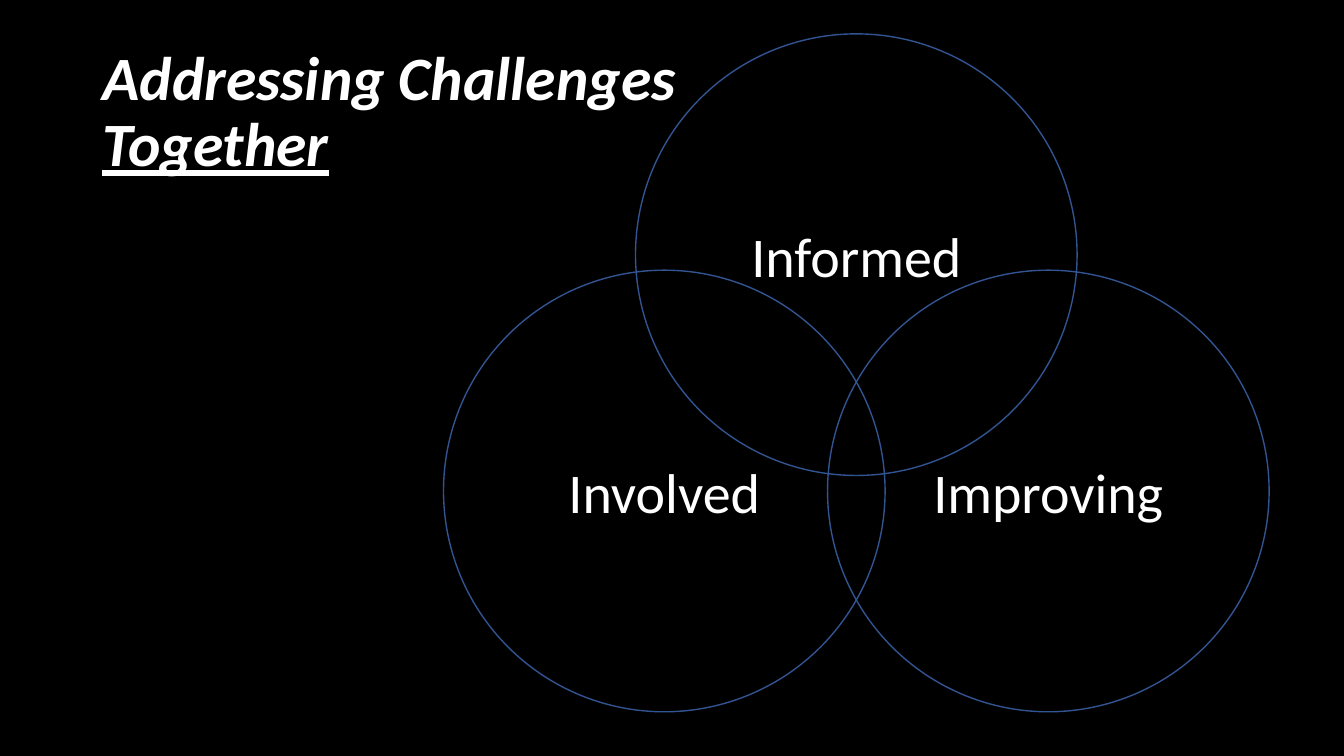
from pptx import Presentation
from pptx.dml.color import RGBColor
from pptx.enum.shapes import MSO_SHAPE
from pptx.enum.text import MSO_ANCHOR, PP_ALIGN
from pptx.util import Pt

FONT = "Calibri"
BLACK = "000000"
WHITE = "FFFFFF"
BLUE = "325491"


def color(hex_string):
    return RGBColor.from_string(hex_string)


def add_run(paragraph, text, size, bold=False, italic=False, underline=False):
    run = paragraph.add_run()
    run.text = text
    font = run.font
    font.name = FONT
    font.size = Pt(size)
    font.bold = bold
    font.italic = italic
    font.underline = underline
    font.color.rgb = color(WHITE)


def add_title(slide, left, top, width, height):
    title = slide.shapes.add_textbox(Pt(left), Pt(top), Pt(width), Pt(height))
    frame = title.text_frame
    frame.word_wrap = True
    frame.vertical_anchor = MSO_ANCHOR.MIDDLE
    paragraph = frame.paragraphs[0]
    paragraph.line_spacing = 0.9
    add_run(paragraph, "Addressing Challenges ", 44, bold=True, italic=True)
    add_run(paragraph, "Together", 44, bold=True, italic=True, underline=True)


def add_circle(slide, label, left, top, diameter):
    circle = slide.shapes.add_shape(
        MSO_SHAPE.OVAL, Pt(left), Pt(top), Pt(diameter), Pt(diameter))
    circle.shadow.inherit = False
    circle.fill.background()
    circle.line.color.rgb = color(BLUE)
    circle.line.width = Pt(1)
    frame = circle.text_frame
    frame.word_wrap = True
    frame.vertical_anchor = MSO_ANCHOR.MIDDLE
    paragraph = frame.paragraphs[0]
    paragraph.alignment = PP_ALIGN.CENTER
    add_run(paragraph, label, 40)


def add_venn(slide, left, top, width, height, diameter):
    """Place one circle at the top centre and two in the lower corners."""
    across = width - diameter
    down = height - diameter
    for label, x_share, y_share in (
            ("Informed", 0.5, 0), ("Involved", 0, 1), ("Improving", 1, 1)):
        add_circle(slide, label, left + across * x_share,
                   top + down * y_share, diameter)


def main():
    deck = Presentation()
    deck.slide_width, deck.slide_height = Pt(960), Pt(540)
    slide = deck.slides.add_slide(deck.slide_layouts[6])
    background = slide.background.fill
    background.solid()
    background.fore_color.rgb = color(BLACK)
    add_title(slide, 66, 28.75, 461, 104.4)
    add_venn(slide, 316.8, 24.2, 589.7, 484.2, diameter=315.4)
    deck.save("out.pptx")


if __name__ == "__main__":
    main()
